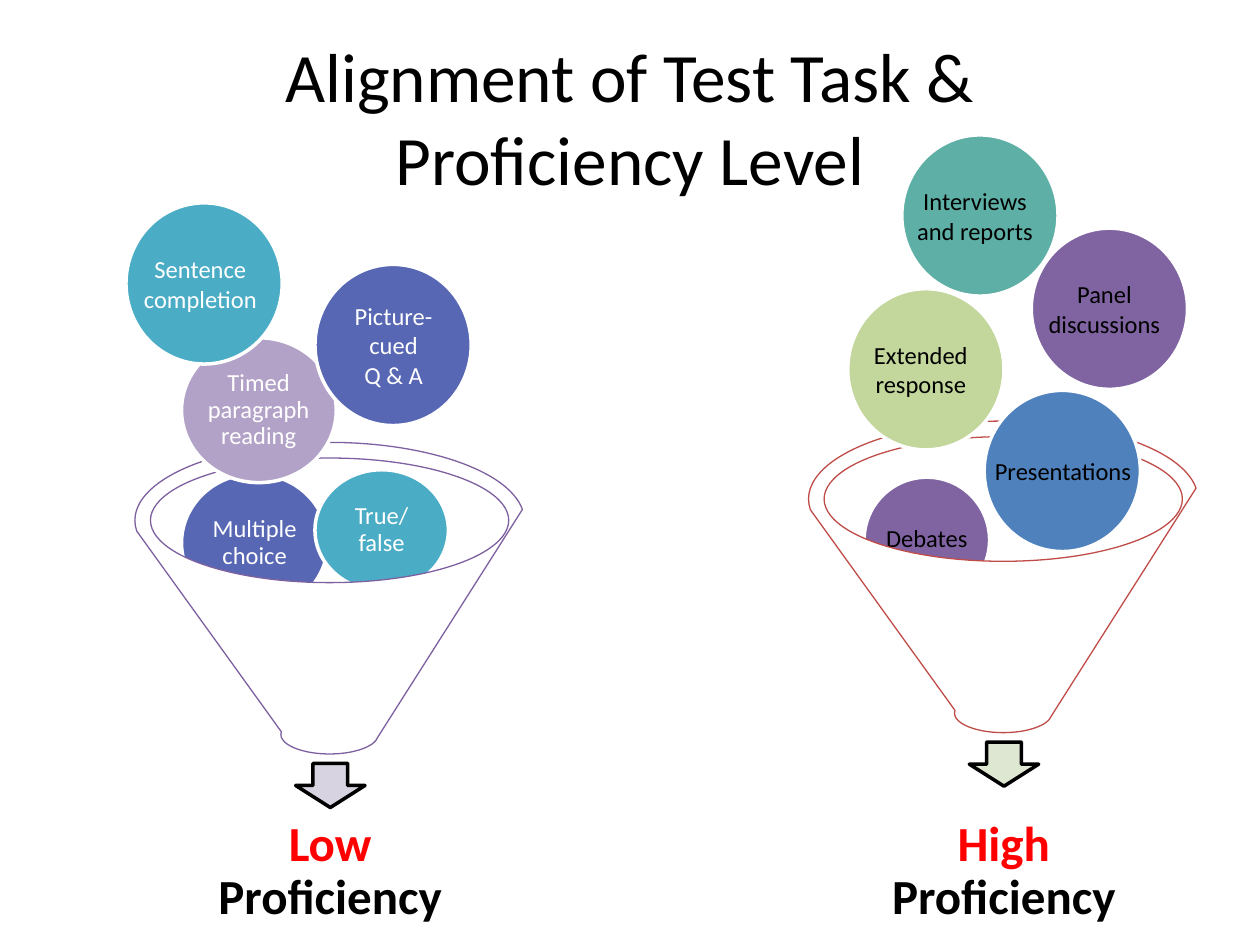
from dataclasses import dataclass
from typing import Optional

import pptx
import pptx.dml.color
import pptx.enum.shapes
import pptx.enum.text
import pptx.util

Cm = pptx.util.Cm
Pt = pptx.util.Pt
RGBColor = pptx.dml.color.RGBColor
Shape = pptx.enum.shapes.MSO_SHAPE
Align = pptx.enum.text.PP_ALIGN
Anchor = pptx.enum.text.MSO_ANCHOR

BLACK = RGBColor(0x00, 0x00, 0x00)
WHITE = RGBColor(0xFF, 0xFF, 0xFF)
RED = RGBColor(0xFF, 0x00, 0x00)
TEAL = RGBColor(0x4B, 0xAC, 0xC6)
INDIGO = RGBColor(0x57, 0x67, 0xB4)
LILAC = RGBColor(0xB3, 0xA2, 0xC7)
PURPLE = RGBColor(0x80, 0x64, 0xA2)
LIME = RGBColor(0xC3, 0xD6, 0x9B)
BLUE = RGBColor(0x4F, 0x81, 0xBD)
SEA_GREEN = RGBColor(0x5E, 0xAF, 0xA6)
FUNNEL_PURPLE = RGBColor(0x7D, 0x60, 0xA0)
FUNNEL_RED = RGBColor(0xBF, 0x4C, 0x48)
PALE_PURPLE = RGBColor(0xD8, 0xD3, 0xE0)
PALE_GREEN = RGBColor(0xDE, 0xE7, 0xD1)

FONT = "Calibri"
TIGHT = 0.9
LABEL_INSET = 0.146  # share of a ball's height above and below its label


@dataclass
class Ball:
    """A task; without a label span its text sits in the ball itself. Lengths in cm."""
    text: str
    fill: RGBColor
    left: float
    top: float
    width: float = 3.15
    height: float = 3.25
    label_left: Optional[float] = None
    label_width: float = 2.67
    spacing: float = 1.0


@dataclass
class Funnel:
    level: str
    left: float
    top: float
    line: RGBColor
    arrow_fill: RGBColor
    text_color: RGBColor
    inside: list[Ball]
    above: list[Ball]


FUNNELS = [
    Funnel(
        "Low", 2.72, 8.92, FUNNEL_PURPLE, PALE_PURPLE, WHITE,
        inside=[
            Ball("Multiple choice", INDIGO, 3.66, 9.55, 2.95, 2.79, spacing=TIGHT),
            Ball("True/ false", TEAL, 6.35, 9.47, 2.69, 2.44, spacing=TIGHT),
        ],
        above=[
            Ball("Timed paragraph reading", LILAC, 3.66, 6.81, 3.12, 2.92, 4.11, 2.21, TIGHT),
            Ball("Picture-cued\nQ & A", INDIGO, 6.35, 5.33, label_left=6.83, label_width=2.21),
            Ball("Sentence completion", TEAL, 2.54, 4.09, label_left=2.74, label_width=2.6),
        ],
    ),
    Funnel(
        "High", 16.3, 8.49, FUNNEL_RED, PALE_GREEN, BLACK,
        inside=[Ball("Debates", PURPLE, 17.42, 9.62, 2.53, 2.53, spacing=TIGHT)],
        above=[
            Ball("Extended\nresponse", LIME, 17.09, 5.82, label_left=17.23),
            Ball("Presentations", BLUE, 19.84, 7.87, label_left=19.98, label_width=2.9),
            Ball("Interviews and reports", SEA_GREEN, 18.18, 2.72, label_left=18.32),
            Ball("Panel discussions", PURPLE, 20.79, 4.6, label_left=20.93),
        ],
    ),
]


def format_span(span, size: float, color: RGBColor, bold: bool = False) -> None:
    for name, value in {"name": FONT, "size": Pt(size), "bold": bold}.items():
        setattr(span.font, name, value)
    span.font.color.rgb = color


def format_frame(frame, inset: float) -> None:
    margins = {f"margin_{side}": Cm(inset) for side in ("left", "top", "right", "bottom")}
    settings = {"word_wrap": True, "vertical_anchor": Anchor.MIDDLE, **margins}
    for name, value in settings.items():
        setattr(frame, name, value)


def add_outlined(page, kind, left: float, top: float, width: float, height: float,
                 fill: RGBColor, line: RGBColor, weight: float):
    box = page.shapes.add_shape(kind, Cm(left), Cm(top), Cm(width), Cm(height))
    box.shadow.inherit = False
    box.fill.solid()
    box.fill.fore_color.rgb = fill
    box.line.color.rgb = line
    box.line.width = Pt(weight)
    return box


def add_ball(page, ball: Ball, color: RGBColor) -> None:
    box = add_outlined(page, Shape.OVAL, ball.left, ball.top, ball.width, ball.height,
                       ball.fill, WHITE, 2)
    if ball.label_left is not None:
        inset = LABEL_INSET * ball.height
        box = page.shapes.add_textbox(Cm(ball.label_left), Cm(ball.top + inset),
                                      Cm(ball.label_width), Cm(ball.height - 2 * inset))
    frame = box.text_frame
    format_frame(frame, 0.05)
    frame.text = ball.text
    for para in frame.paragraphs:
        para.alignment = Align.CENTER
        para.line_spacing = ball.spacing
        for span in para.runs:
            format_span(span, 14, color)


def add_level(page, funnel: Funnel) -> None:
    box = page.shapes.add_textbox(Cm(funnel.left + 0.57), Cm(16.74), Cm(6.73), Cm(1.68))
    format_frame(box.text_frame, 0.56)
    para = box.text_frame.paragraphs[0]
    para.alignment = Align.CENTER
    para.line_spacing = TIGHT
    for text, color in ((f"{funnel.level} ", RED), ("Proficiency", BLACK)):
        span = para.add_run()
        span.text = text
        format_span(span, 28, color, bold=True)


def add_funnel(page, funnel: Funnel) -> None:
    for ball in funnel.inside:
        add_ball(page, ball, funnel.text_color)
    add_outlined(page, Shape.FUNNEL, funnel.left, funnel.top, 7.85, 6.28,
                 WHITE, funnel.line, 0.75)
    add_outlined(page, Shape.DOWN_ARROW, funnel.left + 3.24, funnel.top + 6.47, 1.4, 0.89,
                 funnel.arrow_fill, BLACK, 2)
    add_level(page, funnel)
    for ball in funnel.above:
        add_ball(page, ball, funnel.text_color)


def add_title(page) -> None:
    title = page.shapes.title
    place = {"left": 1.27, "top": 0.76, "width": 22.86, "height": 3.18}
    for name, value in place.items():
        setattr(title, name, Cm(value))
    title.text_frame.vertical_anchor = Anchor.MIDDLE
    para = title.text_frame.paragraphs[0]
    para.text = "Alignment of Test Task &\vProficiency Level"
    para.alignment = Align.CENTER
    for span in para.runs:
        format_span(span, 39.6, BLACK)


def main() -> None:
    deck = pptx.Presentation()
    deck.slide_width, deck.slide_height = Cm(25.4), Cm(19.05)
    page = deck.slides.add_slide(deck.slide_layouts[5])
    add_title(page)
    for funnel in FUNNELS:
        add_funnel(page, funnel)
    deck.save("out.pptx")


if __name__ == "__main__":
    main()
